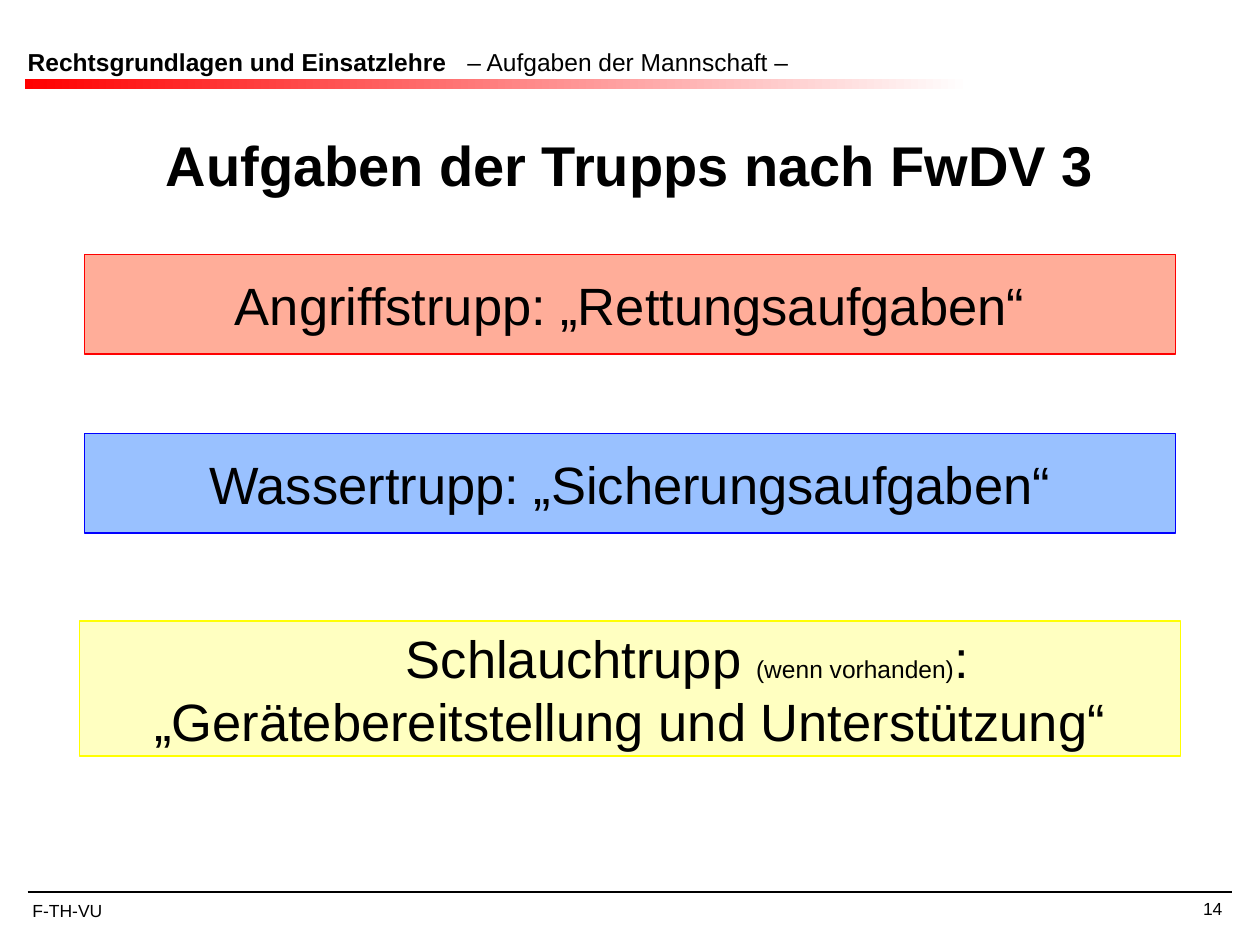
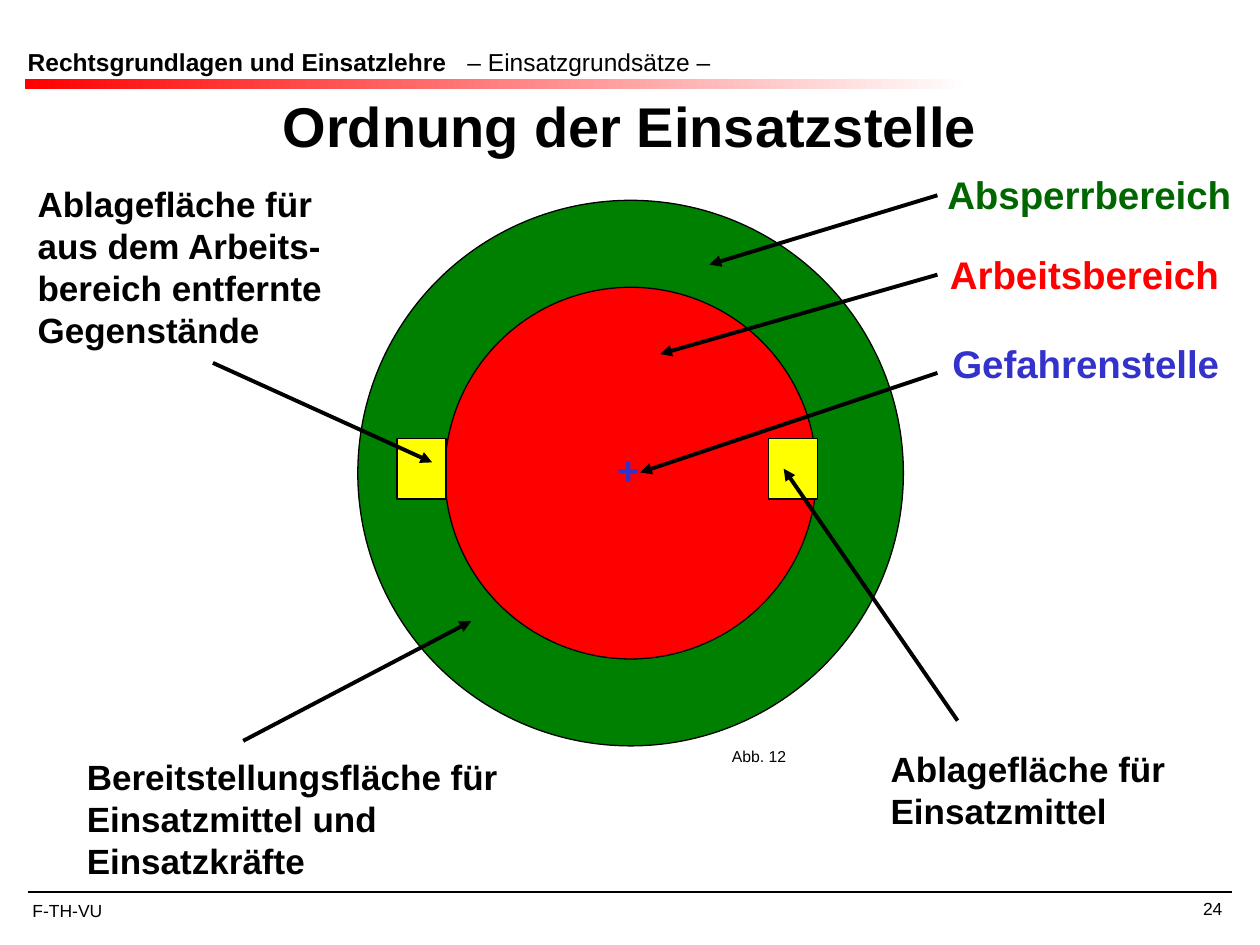
from lxml import etree
from pptx import Presentation, util as u
from pptx.dml.color import RGBColor
from pptx.enum import shapes, text
from pptx.oxml.ns import qn

PX = 9144
FONT = "Arial"
BLACK = RGBColor(0, 0, 0)
WHITE = RGBColor(255, 255, 255)
RED = RGBColor(255, 0, 0)
ORANGE = RGBColor(255, 51, 0)
BLUE = RGBColor(0, 0, 255)
AZURE = RGBColor(0, 102, 255)
INDIGO = RGBColor(51, 51, 204)
YELLOW = RGBColor(255, 255, 0)
LEMON = RGBColor(255, 255, 102)
GREEN = RGBColor(0, 128, 0)
DARK = RGBColor(0, 102, 0)
LEFT, MID, RIGHT = text.PP_ALIGN.LEFT, text.PP_ALIGN.CENTER, text.PP_ALIGN.RIGHT
RECT, OVAL = shapes.MSO_SHAPE.RECTANGLE, shapes.MSO_SHAPE.OVAL
COURSE = "Rechtsgrundlagen und Einsatzlehre"


def emu(*vals):
    """Turn px lengths into EMU."""
    return [u.Emu(v * PX) for v in vals]


def put(item, style):
    """Set each attribute in style on item."""
    for key, val in style.items():
        setattr(item, key, val)


def add_run(para, words, size, color=BLACK, bold=False):
    """Append one formatted run."""
    run = para.add_run()
    run.text = words
    put(run.font, dict(name=FONT, size=u.Pt(size), bold=bold))
    run.font.color.rgb = color


def frame(shape, anchor=text.MSO_ANCHOR.TOP):
    """Prepare the text frame of a shape."""
    put(shape.text_frame, dict(word_wrap=True, vertical_anchor=anchor,
                               auto_size=text.MSO_AUTO_SIZE.NONE))
    return shape.text_frame


def label(slide, box, words, size, color=BLACK, bold=True, align=LEFT):
    """Add a text box with one paragraph."""
    para = frame(slide.shapes.add_textbox(*emu(*box))).paragraphs[0]
    para.alignment = align
    add_run(para, words, size, color, bold)


def block(slide, kind, box, fill, edge=BLACK, alpha=None):
    """Add a filled and outlined preset shape."""
    shape = slide.shapes.add_shape(kind, *emu(*box))
    shape.shadow.inherit = False
    shape.fill.solid()
    shape.fill.fore_color.rgb = fill
    shape.line.color.rgb = edge
    shape.line.width = u.Pt(0.75)
    if alpha:
        tint = shape.fill._xPr.find(qn("a:solidFill"))[0]
        etree.SubElement(tint, qn("a:alpha"), val=str(alpha * 1000))
    return shape


def rule(slide, ends, width, arrow=False):
    """Add a black line, with an arrowhead at its end on request."""
    line = slide.shapes.add_connector(shapes.MSO_CONNECTOR.STRAIGHT, *emu(*ends))
    line.line.color.rgb = BLACK
    line.line.width = u.Pt(width)
    if arrow:
        etree.SubElement(line.line._ln, qn("a:tailEnd"), type="triangle")
    etree.SubElement(line._element.spPr, qn("a:effectLst"))


def header(slide, box, topic):
    """Format the title placeholder and add the fading band below it."""
    x, y, w, h = box
    title = slide.shapes.title
    put(title, dict(zip(("left", "top", "width", "height"), emu(*box))))
    para = frame(title, text.MSO_ANCHOR.MIDDLE).paragraphs[0]
    para.alignment = LEFT
    tabs = etree.SubElement(para._p.get_or_add_pPr(), qn("a:tabLst"))
    etree.SubElement(tabs, qn("a:tab"), pos=str(349 * PX), algn="l")
    add_run(para, COURSE, 14, bold=True)
    add_run(para, f"\t– {topic} –", 14)
    band = slide.shapes.add_shape(RECT, *emu(x + 8, y + 35, 750, 8))
    band.shadow.inherit = False
    band.line.fill.background()
    band.fill.gradient()
    band.fill.gradient_angle = 0
    for stop, color, place in zip(band.fill.gradient_stops, (RED, WHITE), (0, 1)):
        stop.color.rgb = color
        stop.position = place


def footer(slide, box, number):
    """Add the closing line, course code and page number."""
    x, y, w, h = box
    rule(slide, (x + 6, y, x + w - 2, y), 0.75)
    label(slide, (x, y + 1, 240, 24), "F-TH-VU", 10, bold=False)
    label(slide, (x + w - 208, y, 208, h), number, 10, bold=False, align=RIGHT)


def base(deck, topic, number):
    """Start a slide with the shared header and footer."""
    slide = deck.slides.add_slide(deck.slide_layouts[5])
    header(slide, (12, 28, 716, 42), topic)
    footer(slide, (16, 708, 964, 29), number)
    return slide


def squads(slide, box):
    """Add the heading and one bar for each squad."""
    x, y, w, h = box
    label(slide, (x, y + 8, w, 64), "Aufgaben der Trupps nach FwDV 3", 32, align=MID)
    bars = [
        ((x, y + 111, w, 79), ORANGE, RED,
         [[("Angriffstrupp: „Rettungsaufgaben“", 30)]]),
        ((x, y + 253, w, 79), AZURE, BLUE,
         [[("Wassertrupp: „Sicherungsaufgaben“", 30)]]),
        ((x - 4, y + 402, w + 8, 107), LEMON, YELLOW,
         [[("Schlauchtrupp ", 30), ("(wenn vorhanden)", 14), (":", 30)],
          [("„Gerätebereitstellung und Unterstützung“", 30)]]),
    ]
    sides = ("margin_left", "margin_top", "margin_right", "margin_bottom")
    for place, fill, edge, lines in bars:
        body = frame(block(slide, RECT, place, fill, edge, 40), text.MSO_ANCHOR.MIDDLE)
        put(body, dict.fromkeys(sides, u.Emu(4 * PX)))
        for num, parts in enumerate(lines):
            para = body.add_paragraph() if num else body.paragraphs[0]
            para.alignment = MID
            if len(parts) > 1:
                para._p.get_or_add_pPr().set("marL", str(91 * PX))
            for words, size in parts:
                add_run(para, words, size)


def zones(slide, box):
    """Add the rings, storage areas, arrows and labels of the site plan."""
    x, y, w, h = box
    for size, fill in ((433, GREEN), (295, RED)):
        block(slide, OVAL, (x + 480 - size // 2, y + 245 - size // 2, size, size), fill)
    for left in (295, 590):
        block(slide, RECT, (x + left, y + 218, 39, 48), YELLOW)
    arrows = [
        (724, 25, 543, 80), (724, 88, 504, 151), (724, 166, 488, 245),
        (149, 158, 323, 237), (740, 442, 602, 242), (173, 458, 354, 363),
    ]
    for ax, ay, bx, by in arrows:
        rule(slide, (x + ax, y + ay, x + bx, y + by), 2.25, True)
    names = [
        (722, 1, 256, 47, "Absperrbereich", 22, DARK),
        (724, 64, 252, 47, "Arbeitsbereich", 22, RED),
        (726, 135, 234, 50, "Gefahrenstelle", 22, INDIGO),
        (460, 219, 39, 47, "+", 22, INDIGO),
        (0, 10, 276, 143,
         "Ablagefläche für aus dem Arbeits-bereich entfernte Gegenstände", 20, BLACK),
        (677, 458, 264, 77, "Ablagefläche für Einsatzmittel", 20, BLACK),
        (39, 465, 418, 110,
         "Bereitstellungsfläche für Einsatzmittel und Einsatzkräfte", 20, BLACK),
    ]
    for dx, dy, wide, high, words, size, color in names:
        label(slide, (x + dx, y + dy, wide, high), words, size, color)
    label(slide, (x + 551, y + 458, 102, 25), "Abb. 12", 9, bold=False)


def main():
    """Build and save the two slides."""
    deck = Presentation()
    deck.slide_width, deck.slide_height = emu(1000, 750)
    squads(base(deck, "Aufgaben der Mannschaft", "14"), (67, 91, 866, 509))
    site = base(deck, "Einsatzgrundsätze", "24")
    label(site, (55, 68, 890, 64), "Ordnung der Einsatzstelle", 32, align=MID)
    zones(site, (20, 130, 960, 575))
    deck.save("out.pptx")


if __name__ == "__main__":
    main()
